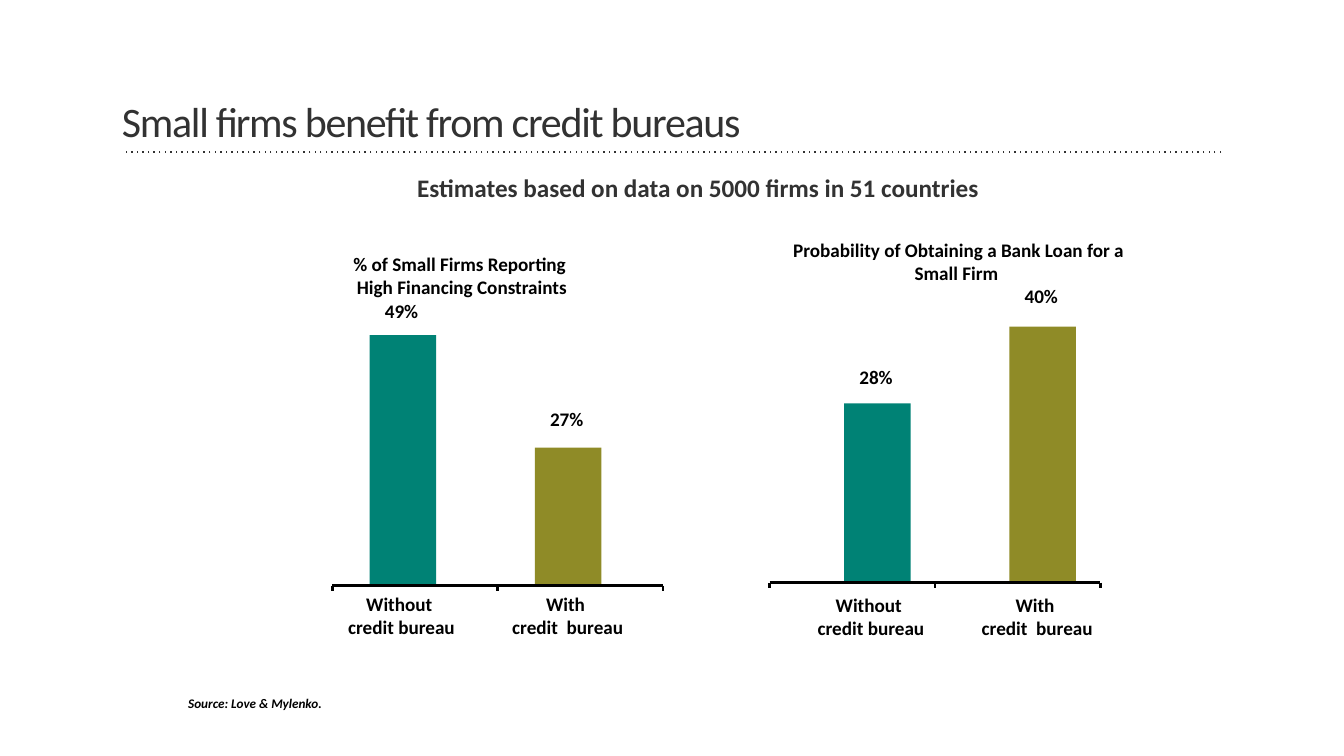
from pptx import Presentation
from pptx.dml.color import RGBColor
from pptx.enum.dml import MSO_LINE
from pptx.enum.shapes import MSO_CONNECTOR as CONN, MSO_SHAPE as SHAPE
from pptx.enum.text import MSO_ANCHOR as ANCHOR, MSO_AUTO_SIZE as AUTO, PP_ALIGN as ALIGN
from pptx.oxml.ns import qn
from pptx.util import Inches, Pt

DARK = RGBColor(0x32, 0x32, 0x32)
BLACK = RGBColor(0, 0, 0)
TEAL = RGBColor(0x00, 0x82, 0x75)
OLIVE = RGBColor(0x8F, 0x8B, 0x27)

PITCH = 1.64  # distance between neighbouring bars and axis ticks
BAR_W = 0.66
VALUE_W, VALUE_H = 0.34, 0.23
TWO_LINES_H = 0.46
BARS = [
    (TEAL, 1.21, ["Without ", "credit bureau"]),
    (OLIVE, 1.35, ["With ", "credit  bureau"]),
]
CHARTS = [
    dict(title=["% of Small Firms Reporting ", "High Financing Constraints"],
         title_at=(3.05, 2.5, 3.07), title_wrap=True,
         values=[49, 27], axis_left=3.3, base=5.81, bar_left=3.67,
         per_point=0.0507, value_gap=0.36, label_left=3.38, label_top=5.88),
    dict(title=["Probability of Obtaining a Bank Loan for a", "Small Firm "],
         title_at=(7.85, 2.36, 3.33), title_wrap=False,
         values=[28, 40], axis_left=7.64, base=5.78, bar_left=8.38,
         per_point=0.0635, value_gap=0.38, label_left=8.04, label_top=5.89),
]


def set_font(font, color=BLACK, **formats):
    values = {"name": "Calibri", "size": Pt(13.7), "bold": True, **formats}
    for name, value in values.items():
        setattr(font, name, value)
    font.color.rgb = color


def set_frame(tf, margins, **formats):
    sides = ("margin_left", "margin_top", "margin_right", "margin_bottom")
    for name, value in {**dict(zip(sides, map(Inches, margins))), **formats}.items():
        setattr(tf, name, value)


def add_text(s, lines, left, top, width, height, align=ALIGN.CENTER,
             margins=(0, 0, 0, 0), wrap=True, **font):
    box = s.shapes.add_textbox(*map(Inches, (left, top, width, height)))
    tf = box.text_frame
    set_frame(tf, margins, word_wrap=wrap, auto_size=AUTO.SHAPE_TO_FIT_TEXT)
    for i, line in enumerate(lines):
        p = tf.paragraphs[0] if i == 0 else tf.add_paragraph()
        p.alignment = align
        r = p.add_run()
        r.text = line
        set_font(r.font, **font)


def add_line(s, x1, y1, x2, y2, color=BLACK, width=0):
    line = s.shapes.add_connector(CONN.STRAIGHT, *map(Inches, (x1, y1, x2, y2)))
    line.line.color.rgb = color
    line.line.width = Pt(width)
    sp_pr = line._element.spPr
    sp_pr.append(sp_pr.makeelement(qn("a:effectLst"), {}))
    return line


def add_bar(s, left, top, height, color):
    sp = s.shapes.add_shape(SHAPE.RECTANGLE, *map(Inches, (left, top, BAR_W, height)))
    sp.shadow.inherit = False
    sp.fill.solid()
    sp.fill.fore_color.rgb = color
    sp.line.fill.background()


def add_title(s, text):
    title = s.shapes.title
    title.left, title.top, title.width, title.height = map(
        Inches, (1.21, 0.78, 8.72, 0.67))
    tf = title.text_frame
    set_frame(tf, (0, 0.05, 0.1, 0), vertical_anchor=ANCHOR.BOTTOM,
              word_wrap=True, auto_size=AUTO.NONE)
    p = tf.paragraphs[0]
    p.alignment = ALIGN.LEFT
    p.line_spacing = 0.9
    r = p.add_run()
    r.text = text
    set_font(r.font, DARK, size=Pt(30), bold=False)
    r._r.get_or_add_rPr().set("spc", "-90")

    # Dotted rule below the title
    rule = add_line(s, 12.12, 1.51, 1.22, 1.51, DARK, 1)
    rule.line.dash_style = MSO_LINE.ROUND_DOT
    rule._element.spPr.find(".//" + qn("a:prstDash")).set("val", "dot")


def add_bar_panel(s, title, title_at, title_wrap, values, axis_left, base,
                  bar_left, per_point, value_gap, label_left, label_top):
    # Bars with their values and categories
    for i, (value, (color, label_w, label)) in enumerate(zip(values, BARS)):
        left = bar_left + i * PITCH
        height = value * per_point
        top = base - height
        add_bar(s, left, top, height, color)
        add_text(s, [f"{value}%"], left + 0.15, top - value_gap - 0.04 * i,
                 VALUE_W, VALUE_H, ALIGN.LEFT, wrap=False)
        add_text(s, label, label_left + i * 1.58, label_top, label_w, TWO_LINES_H)

    # Axis with ticks
    add_line(s, axis_left, base, axis_left + 2 * PITCH, base)
    for i in range(3):
        x = axis_left + i * PITCH
        add_line(s, x, base, x, base + 0.05)

    add_text(s, title, *title_at, TWO_LINES_H, wrap=title_wrap)


def main():
    prs = Presentation()
    prs.slide_width, prs.slide_height = Inches(13.34), Inches(7.5)
    s = prs.slides.add_slide(prs.slide_layouts[5])

    add_title(s, "Small firms benefit from credit bureaus")
    padded = (0.1, 0.05, 0.1, 0.05)
    add_text(s, ["Estimates based on data on 5000 firms in 51 countries"],
             2.22, 1.66, 9.42, 0.4, margins=padded, size=Pt(18), color=DARK)
    add_text(s, ["Source: Love & Mylenko."], 1.77, 6.85, 9.42, 0.26, ALIGN.LEFT,
             padded, size=Pt(9.4), italic=True)
    for chart in CHARTS:
        add_bar_panel(s, **chart)

    prs.save("out.pptx")


if __name__ == "__main__":
    main()
